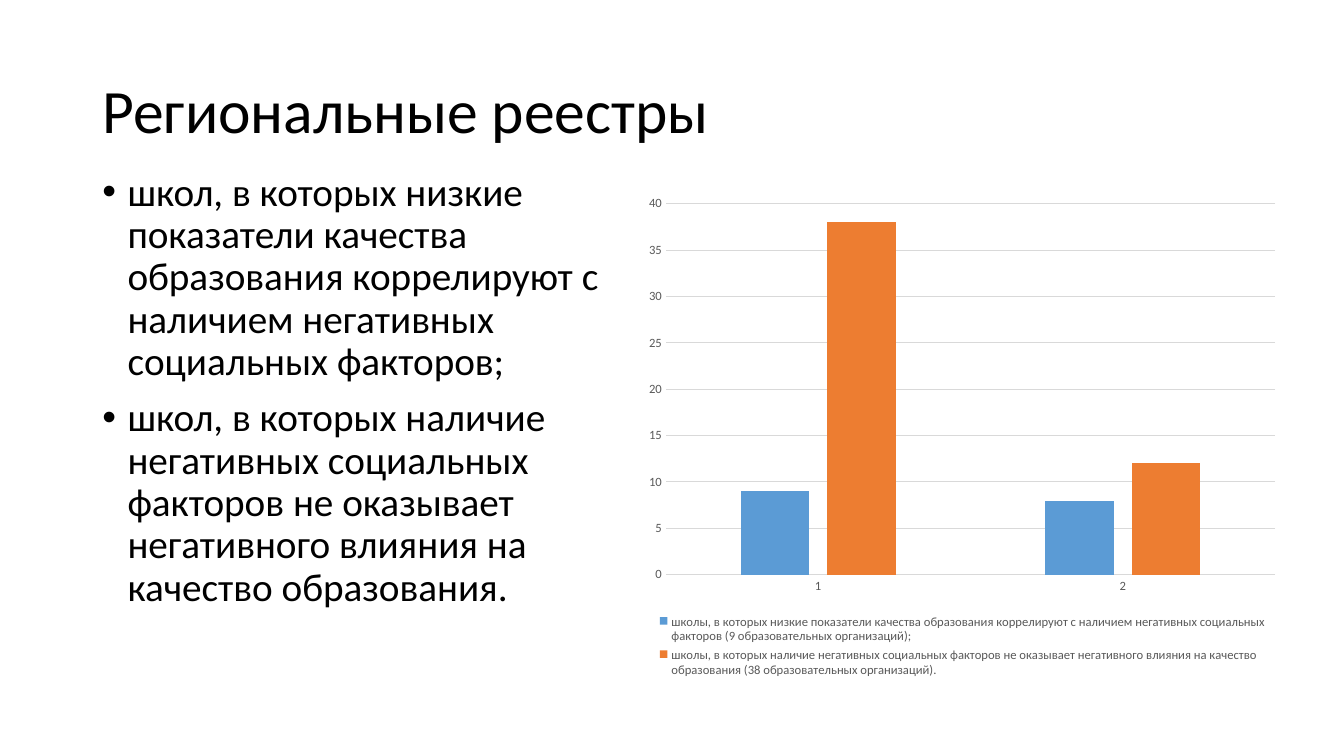
"""Build the slide on regional school registers with a bar chart."""
from dataclasses import dataclass
from typing import Any

from lxml.etree import SubElement
from pptx import Presentation
from pptx.chart.data import CategoryChartData
from pptx.dml.color import RGBColor
from pptx.enum.chart import XL_CHART_TYPE, XL_LEGEND_POSITION, XL_TICK_MARK
from pptx.enum.text import MSO_ANCHOR
from pptx.oxml.ns import qn
from pptx.util import Pt

BLACK = RGBColor(0x00, 0x00, 0x00)
GREY = RGBColor(0x59, 0x59, 0x59)
PALE = RGBColor(0xD9, 0xD9, 0xD9)
BLUE = RGBColor(0x5B, 0x9B, 0xD5)
ORANGE = RGBColor(0xED, 0x7D, 0x31)
FACE = "Calibri"


@dataclass(frozen=True)
class Block:
    box: tuple[float, ...]
    size: float
    lines: tuple[str, ...]
    anchor: MSO_ANCHOR
    format: dict[str, Any]
    indent: float = 0


@dataclass(frozen=True)
class Series:
    name: str
    values: tuple[int, ...]
    color: RGBColor


BLOCKS = (
    Block((66, 28.75, 828, 104.4), 44, ("Региональные реестры",),
          MSO_ANCHOR.MIDDLE, {"line_spacing": 0.9}),
    Block((66, 119.5, 408, 367), 28, (
        "школ, в которых низкие показатели качества образования коррелируют "
        "с наличием негативных социальных факторов;",
        "школ, в которых наличие негативных социальных факторов не оказывает "
        "негативного влияния на качество образования.",
    ), MSO_ANCHOR.TOP, {"line_spacing": 0.9, "space_before": Pt(10)}, 18),
)
SERIES = (
    Series("школы, в которых низкие показатели качества образования коррелируют "
           "с наличием негативных социальных факторов "
           "(9 образовательных организаций);", (9, 8), BLUE),
    Series("школы, в которых наличие негативных социальных факторов не оказывает "
           "негативного влияния на качество образования "
           "(38 образовательных организаций).", (38, 12), ORANGE),
)
CHART_BOX = (454.3, 133.2, 465.8, 353.5)


def apply(target: Any, values: dict[str, Any]) -> None:
    """Set each named value on the target."""
    for name, value in values.items():
        setattr(target, name, value)


def style(font: Any, size: float, color: RGBColor) -> None:
    """Give a font its face, size and colour."""
    apply(font, {"name": FACE, "size": Pt(size)})
    font.color.rgb = color


def rule(line: Any) -> None:
    """Make a line thin and pale."""
    line.color.rgb = PALE
    line.width = Pt(0.75)


def bullet(para: Any, indent: float) -> None:
    """Give a paragraph a hanging bullet."""
    props = para._p.get_or_add_pPr()
    props.set("marL", str(Pt(indent)))
    props.set("indent", str(-Pt(indent)))
    SubElement(props, qn("a:buFont")).set("typeface", "Arial")
    SubElement(props, qn("a:buChar")).set("char", "•")


def add_block(slide: Any, block: Block) -> None:
    """Add one text block to the slide."""
    frame = slide.shapes.add_textbox(*map(Pt, block.box)).text_frame
    apply(frame, {"word_wrap": True, "vertical_anchor": block.anchor})
    frame.text = "\n".join(block.lines)
    for para in frame.paragraphs:
        apply(para, block.format)
        style(para.runs[0].font, block.size, BLACK)
        if block.indent:
            bullet(para, block.indent)


def add_bars(slide: Any) -> None:
    """Add the clustered bar chart."""
    data = CategoryChartData()
    data.categories = ["1", "2"]
    for item in SERIES:
        data.add_series(item.name, item.values)
    chart = slide.shapes.add_chart(
        XL_CHART_TYPE.COLUMN_CLUSTERED, *map(Pt, CHART_BOX), data).chart
    apply(chart, {"has_title": False, "has_legend": True})
    style(chart.font, 10, BLACK)
    apply(chart.legend, {"position": XL_LEGEND_POSITION.BOTTOM,
                         "include_in_layout": False})
    style(chart.legend.font, 9, GREY)
    plot = chart.plots[0]
    apply(plot, {"gap_width": 219, "overlap": -27, "vary_by_categories": False})
    for bars, item in zip(plot.series, SERIES):
        bars.format.fill.solid()
        bars.format.fill.fore_color.rgb = item.color
    for axis in (chart.category_axis, chart.value_axis):
        apply(axis, {"major_tick_mark": XL_TICK_MARK.NONE,
                     "minor_tick_mark": XL_TICK_MARK.NONE})
        style(axis.tick_labels.font, 9, GREY)
    rule(chart.category_axis.format.line)
    scale = chart.value_axis
    apply(scale, {"minimum_scale": 0, "maximum_scale": 40, "major_unit": 5,
                  "has_major_gridlines": True})
    scale.format.line.fill.background()
    rule(scale.major_gridlines.format.line)


def main() -> None:
    """Build and save the slide."""
    deck = Presentation()
    apply(deck, {"slide_width": Pt(960), "slide_height": Pt(540)})
    slide = deck.slides.add_slide(deck.slide_layouts[6])
    for block in BLOCKS:
        add_block(slide, block)
    add_bars(slide)
    deck.save("out.pptx")


if __name__ == "__main__":
    main()
